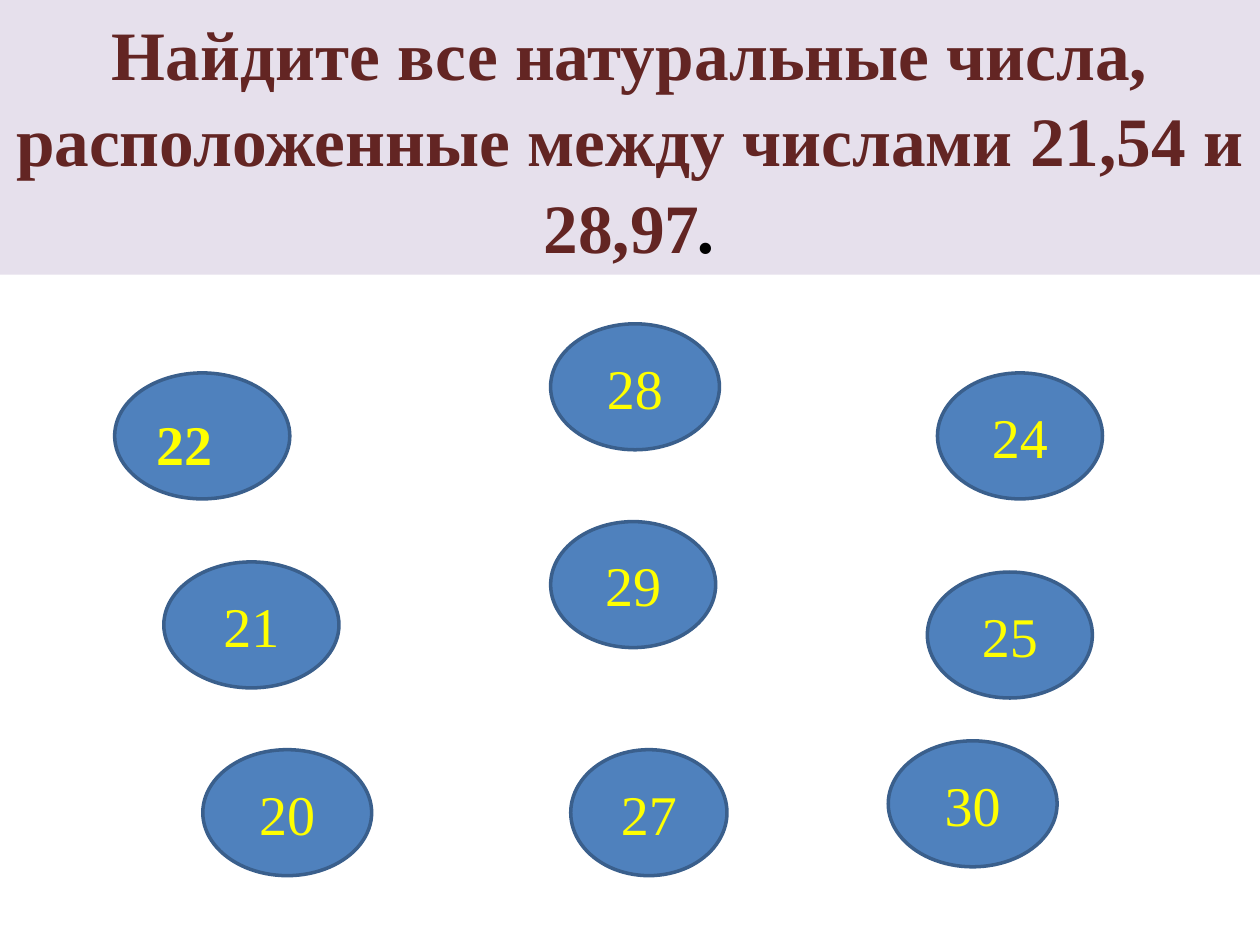
from pptx import Presentation
from pptx.dml.color import RGBColor
from pptx.enum.shapes import MSO_SHAPE as Shape
from pptx.enum.text import MSO_ANCHOR as Anchor, MSO_AUTO_SIZE as AutoSize, PP_ALIGN as Align
from pptx.util import Inches, Pt

"""Build a slide of numbered ovals under a maths question."""

FONT = "Times New Roman"
QUESTION = [
    ("Найдите все натуральные числа, расположенные между числами 21,54 и 28,97", "632523", False),
    (".", "000000", True),
]
OVAL_HEIGHT = 1
OVALS = [
    ("", 0.91, 2.96, 1.39),
    ("28", 4.37, 2.57, 1.34),
    ("24", 7.44, 2.96, 1.31),
    ("21", 1.3, 4.46, 1.39),
    ("29", 4.37, 4.14, 1.31),
    ("25", 7.36, 4.54, 1.31),
    ("20", 1.61, 5.95, 1.34),
    ("30", 7.05, 5.88, 1.34),
    ("27", 4.53, 5.95, 1.24),
]
LABEL = ("22", 1.14, 3.2, 0.94, 0.64)


def color(hex_code):
    return RGBColor.from_string(hex_code)


def fill(shape, hex_code):
    shape.fill.solid()
    shape.fill.fore_color.rgb = color(hex_code)


def add_run(paragraph, text, size, hex_code, bold=False, italic=False):
    run = paragraph.add_run()
    run.text = text
    font = run.font
    font.name, font.size, font.bold, font.italic = FONT, Pt(size), bold, italic
    font.color.rgb = color(hex_code)


def add_question(slide):
    question = slide.shapes.title
    question.left, question.top = Inches(0), Inches(0)
    question.width, question.height = Inches(10), Inches(2.18)
    fill(question, "E6E0EC")
    frame = question.text_frame
    frame.word_wrap = True
    frame.auto_size = AutoSize.NONE
    frame.vertical_anchor = Anchor.MIDDLE
    paragraph = frame.paragraphs[0]
    paragraph.alignment = Align.CENTER
    paragraph.line_spacing = 1.04
    for text, hex_code, italic in QUESTION:
        add_run(paragraph, text, 39.6, hex_code, True, italic)


def add_oval(slide, number, left, top, width):
    oval = slide.shapes.add_shape(
        Shape.OVAL, Inches(left), Inches(top), Inches(width), Inches(OVAL_HEIGHT))
    oval.shadow.inherit = False
    fill(oval, "4F81BD")
    oval.line.color.rgb = color("3A5F8C")
    oval.line.width = Pt(2)
    if number:
        oval.text_frame.vertical_anchor = Anchor.MIDDLE
        paragraph = oval.text_frame.paragraphs[0]
        paragraph.alignment = Align.CENTER
        add_run(paragraph, number, 32, "FFFF00")


def add_label(slide, number, *box):
    label = slide.shapes.add_textbox(*map(Inches, box))
    label.text_frame.word_wrap = True
    label.text_frame.auto_size = AutoSize.SHAPE_TO_FIT_TEXT
    add_run(label.text_frame.paragraphs[0], number, 32, "FFFF00", True)


def main():
    deck = Presentation()
    deck.slide_width, deck.slide_height = Inches(10), Inches(7.5)
    slide = deck.slides.add_slide(deck.slide_layouts[5])
    add_question(slide)
    for oval in OVALS:
        add_oval(slide, *oval)
    add_label(slide, *LABEL)
    deck.save("out.pptx")


if __name__ == "__main__":
    main()
